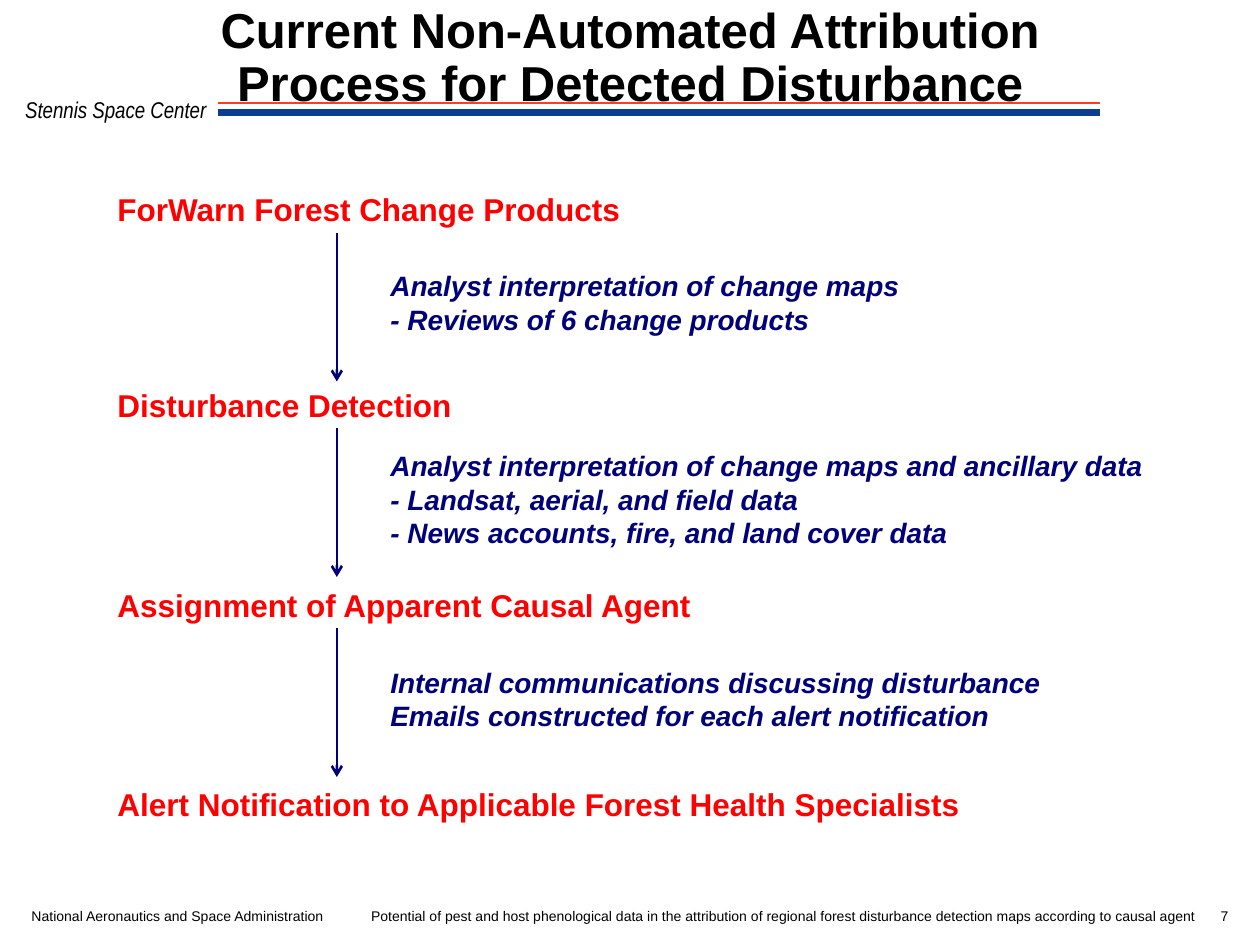
from lxml import etree
from pptx import Presentation
from pptx.dml.color import RGBColor
from pptx.enum import shapes, text
from pptx.oxml import ns
from pptx.util import Pt

BLACK, RED, NAVY = "000000", "FF0000", "00007A"
ORANGE, BLUE = "FC3D21", "0B3D91"
LEFT, CENTER, RIGHT = text.PP_ALIGN.LEFT, text.PP_ALIGN.CENTER, text.PP_ALIGN.RIGHT
TOP, MIDDLE, BOTTOM = text.MSO_ANCHOR.TOP, text.MSO_ANCHOR.MIDDLE, text.MSO_ANCHOR.BOTTOM


def color(hex_string):
    return RGBColor.from_string(hex_string)


class SlideBuilder:
    """Holds the text style and the current slide; lengths are in points."""

    font = "Arial"

    def __init__(self, slide):
        self.slide = slide

    def label(self, box, lines, size, ink=BLACK, bold=False, italic=False,
              font=None, align=LEFT, anchor=TOP, insets=(0, 0),
              wrap=False, spacing=None):
        shape = self.slide.shapes.add_textbox(*(Pt(v) for v in box))
        frame = shape.text_frame
        frame.margin_left = frame.margin_right = Pt(insets[0])
        frame.margin_top = frame.margin_bottom = Pt(insets[1])
        frame.word_wrap = wrap
        frame.vertical_anchor = anchor
        frame.text = "\n".join(lines)
        for paragraph in frame.paragraphs:
            paragraph.alignment = align
            if spacing:
                paragraph.line_spacing = spacing
            for run in paragraph.runs:
                run.font.name = font or self.font
                run.font.size = Pt(size)
                run.font.bold = bold
                run.font.italic = italic
                run.font.color.rgb = color(ink)

    def stage(self, top, width, name):
        self.label((60, top, width, 29), [name], 18, RED, bold=True,
                   anchor=MIDDLE, insets=(7.2, 3.6))

    def note(self, top, width, lines):
        height = 7.2 + 19.3 * len(lines)
        self.label((216, top, width, height), lines, 16, NAVY, bold=True,
                   italic=True, anchor=MIDDLE, insets=(7.2, 3.6))

    def line(self, start, end, ink, width, arrow=False):
        connector = self.slide.shapes.add_connector(
            shapes.MSO_CONNECTOR.STRAIGHT, *(Pt(v) for v in start + end))
        connector.line.color.rgb = color(ink)
        connector.line.width = Pt(width)
        if arrow:
            etree.SubElement(connector.line._get_or_add_ln(),
                             ns.qn("a:tailEnd"), type="arrow")
        etree.SubElement(connector._element.spPr, ns.qn("a:effectLst"))


def main():
    deck = Presentation()
    deck.slide_width, deck.slide_height = Pt(720), Pt(540)
    page = SlideBuilder(deck.slides.add_slide(deck.slide_layouts[6]))

    # Header
    page.label((14.4, 54.8, 103.7, 15.8), ["Stennis Space Center"], 13,
               italic=True, font="Arial Narrow")
    for y, ink, width in ((59, ORANGE, 1), (64.3, BLUE, 4)):
        page.line((124.8, y), (628.8, y), ink, width)
    page.label((99, 7.2, 522, 57),
               ["Current Non-Automated Attribution Process for Detected Disturbance"],
               28, bold=True, align=CENTER, anchor=BOTTOM, wrap=True, spacing=0.9)

    # Process: stage top, stage width, name, then the step leading onward
    process = (
        (105, 305, "ForWarn Forest Change Products", (150, 309, (
            "Analyst interpretation of change maps",
            "- Reviews of 6 change products"))),
        (216.7, 207, "Disturbance Detection", (252.7, 450, (
            "Analyst interpretation of change maps and ancillary data",
            "- Landsat, aerial, and field data",
            "- News accounts, fire, and land cover data"))),
        (331, 346, "Assignment of Apparent Causal Agent", (376.5, 391, (
            "Internal communications discussing disturbance",
            "Emails constructed for each alert notification"))),
        (445, 500, "Alert Notification to Applicable Forest Health Specialists", None),
    )
    for top, width, name, step in process:
        page.stage(top, width, name)
        if step:
            page.line((192.5, top + 28), (192.5, top + 113), NAVY, 1.5, arrow=True)
            page.note(*step)

    # Footer
    for left, width, words, align in (
        (18, 168.5, "National Aeronautics and Space Administration", LEFT),
        (206, 478, "Potential of pest and host phenological data in the attribution of "
                   "regional forest disturbance detection maps according to causal agent",
         RIGHT),
        (692, 10, "7", RIGHT),
    ):
        page.label((left, 518.4, width, 9.4), [words], 8, align=align)

    deck.save("out.pptx")


if __name__ == "__main__":
    main()
